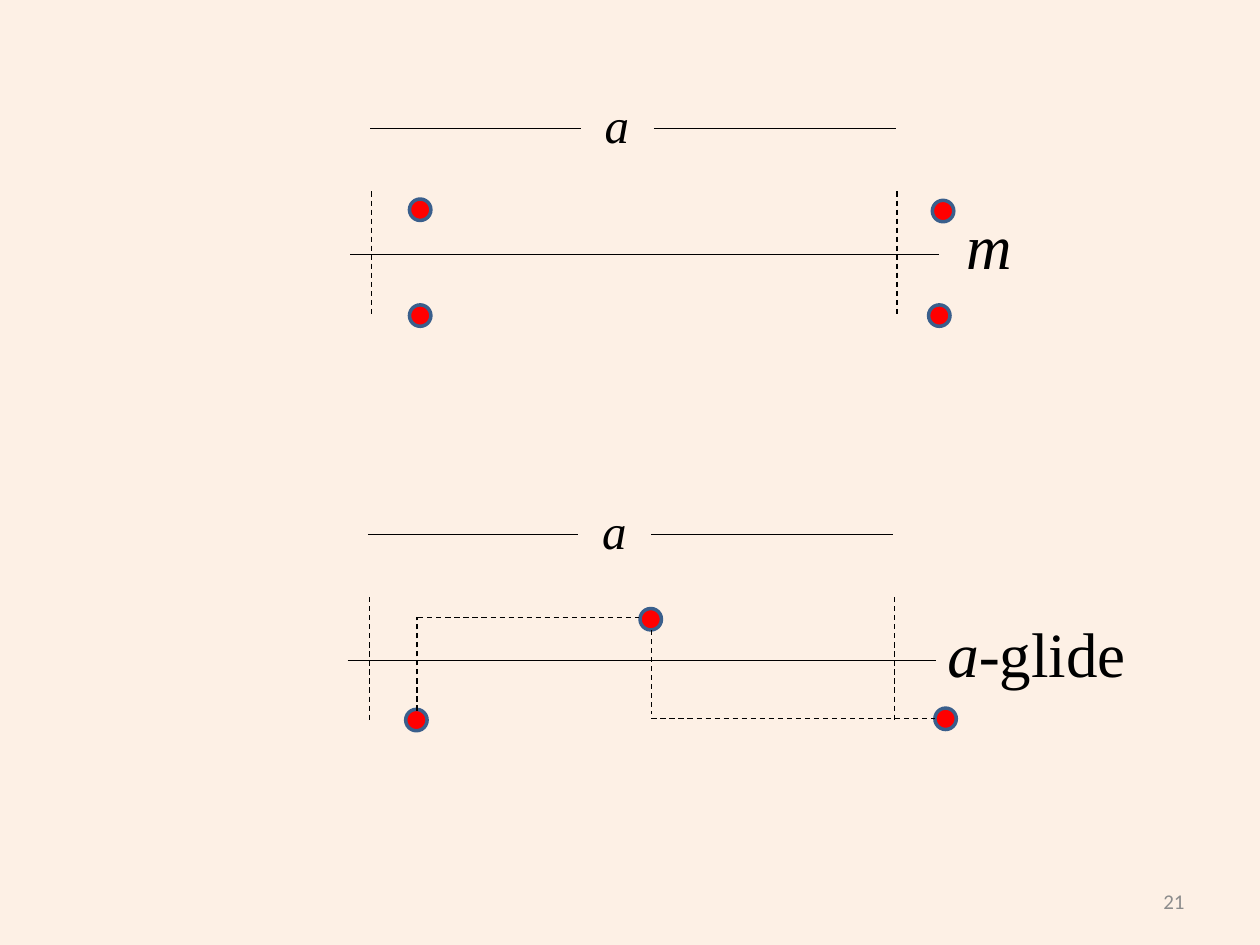
from dataclasses import dataclass

from pptx import Presentation
from pptx import util as u
from pptx.dml.color import RGBColor
from pptx.enum import dml, shapes, text
from pptx.oxml.ns import qn
from lxml import etree


@dataclass(frozen=True)
class Theme:
    """Colours, fonts and sizes of the slide."""
    paper: str = "FDF0E5"
    ink: str = "000000"
    dot: str = "FF0000"
    rim: str = "3A5F8C"
    grey: str = "8C8C8C"
    serif: str = "Times New Roman"
    sans: str = "Calibri"
    name: int = 36
    span: int = 28
    page: int = 12
    thin: float = 0.75
    thick: float = 2


THEME = Theme()
DOT = 0.17


def rgb(code):
    """Return the colour for a hex code."""
    return RGBColor.from_string(code)


def add_line(slide, box, start, end, dash=False):
    """Draw a thin line between two points of the box."""
    left, top = box
    ends = [u.Inches(n) for n in (left + start[0], top + start[1], left + end[0], top + end[1])]
    line = slide.shapes.add_connector(shapes.MSO_CONNECTOR.STRAIGHT, *ends)
    line.line.color.rgb = rgb(THEME.ink)
    line.line.width = u.Pt(THEME.thin)
    if dash:
        line.line.dash_style = dml.MSO_LINE.DASH
    etree.SubElement(line._element.spPr, qn("a:effectLst"))


def add_text(slide, box, place, runs, size, face, color, wrap=True):
    """Write one paragraph of (wording, italic) runs and return its shape."""
    x, y, wide, high = place
    area = [u.Inches(n) for n in (box[0] + x, box[1] + y, wide, high)]
    label = slide.shapes.add_textbox(*area)
    label.text_frame.word_wrap = wrap
    para = label.text_frame.paragraphs[0]
    para.font.size = u.Pt(size)
    para.font.name = face
    para.font.color.rgb = rgb(color)
    for words, slant in runs:
        run = para.add_run()
        run.text = words
        run.font.italic = slant
    return label


def add_dot(slide, box, x, y):
    """Place a rimmed dot with its top left corner at a point of the box."""
    area = [u.Inches(n) for n in (box[0] + x, box[1] + y, DOT, DOT)]
    dot = slide.shapes.add_shape(shapes.MSO_SHAPE.OVAL, *area)
    dot.shadow.inherit = False
    dot.fill.solid()
    dot.fill.fore_color.rgb = rgb(THEME.dot)
    dot.line.color.rgb = rgb(THEME.rim)
    dot.line.width = u.Pt(THEME.thick)


def add_cell(slide, box, place, runs):
    """Draw the axis, cell edges, span a and axis name."""
    add_line(slide, box, (0, 1), (4.67, 1))
    for x in (0.17, 4.34):
        add_line(slide, box, (x, 0.5), (x, 1.5), dash=True)
    for start, end in ((0.16, 1.83), (2.41, 4.33)):
        add_line(slide, box, (start, 0), (end, 0))
    add_text(slide, box, (1.92, -0.32, 0.25, 0.57), [("a", True)],
             THEME.span, THEME.serif, THEME.ink)
    add_text(slide, box, place, runs, THEME.name, THEME.serif, THEME.ink, wrap=False)


def add_mirror(slide, box):
    """Draw the mirror line m with its paired dots."""
    add_cell(slide, box, (4.79, 0.57, 0.57, 0.71), [("m", True)])
    for x, y in ((0.47, 1.4), (4.62, 0.57), (4.59, 1.4), (0.47, 0.56)):
        add_dot(slide, box, x, y)


def add_glide(slide, box):
    """Draw the glide line with its stepped dots."""
    add_cell(slide, box, (4.66, 0.59, 1.69, 0.71), [("a-", True), ("glide", False)])
    for x, y in ((0.46, 1.39), (2.32, 0.59), (4.66, 1.38)):
        add_dot(slide, box, x, y)
    steps = (((0.55, 1.4), (0.55, 0.66)), ((0.56, 0.66), (2.31, 0.66)),
             ((2.41, 0.76), (2.41, 1.43)), ((2.41, 1.46), (4.66, 1.46)))
    for start, end in steps:
        add_line(slide, box, start, end, dash=True)


def add_page(slide, box):
    """Write the page number."""
    label = add_text(slide, box, (0, 0, 2.33, 0.4), [("21", False)],
                     THEME.page, THEME.sans, THEME.grey)
    label.text_frame.vertical_anchor = text.MSO_ANCHOR.MIDDLE
    label.text_frame.paragraphs[0].alignment = text.PP_ALIGN.RIGHT


def main():
    """Build and save the slide."""
    deck = Presentation()
    deck.slide_width, deck.slide_height = u.Inches(10), u.Inches(7.5)
    slide = deck.slides.add_slide(deck.slide_layouts[6])
    slide.background.fill.solid()
    slide.background.fill.fore_color.rgb = rgb(THEME.paper)
    add_page(slide, (7.17, 6.95))
    add_mirror(slide, (2.78, 1.02))
    add_glide(slide, (2.76, 4.24))
    deck.save("out.pptx")


if __name__ == "__main__":
    main()
